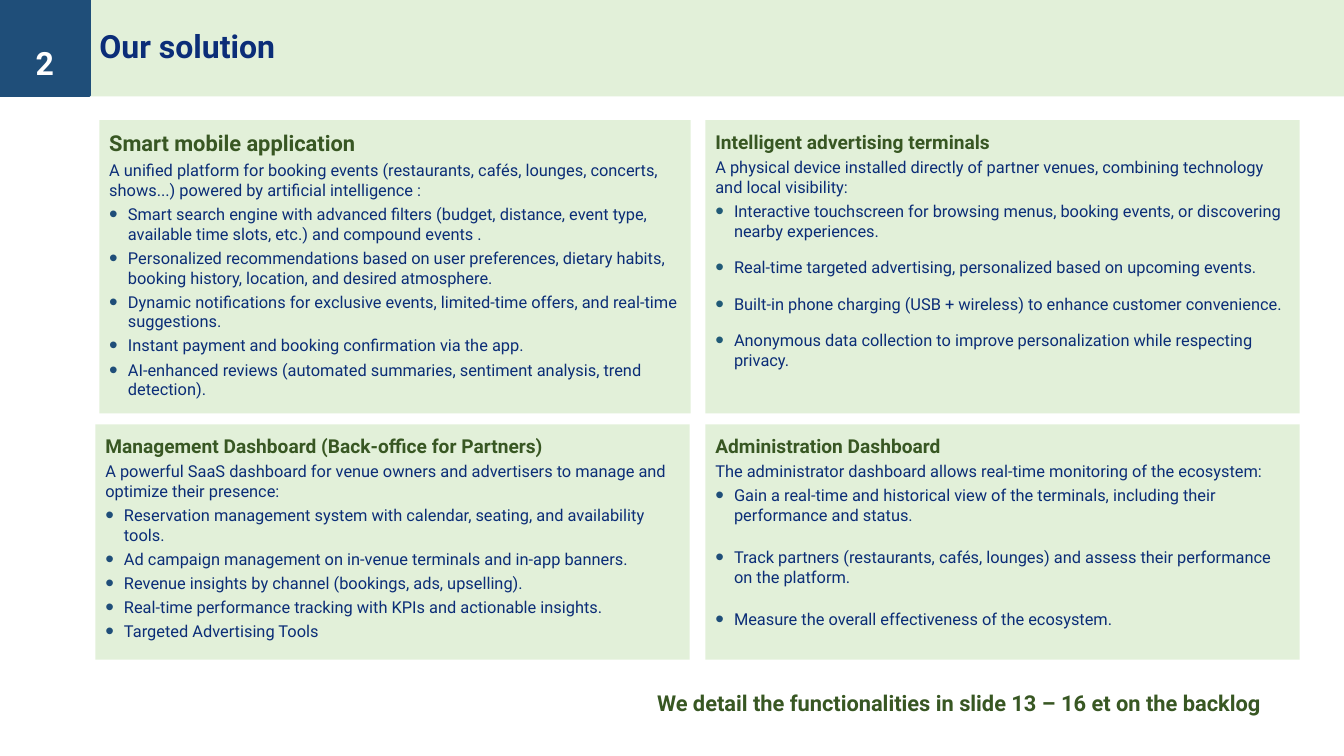
from lxml.etree import SubElement
from pptx import Presentation
from pptx.dml.color import RGBColor
from pptx.enum.shapes import MSO_SHAPE as Shape
from pptx.enum.text import MSO_ANCHOR as Anchor, MSO_AUTO_SIZE as Fit, PP_ALIGN as Align
from pptx.oxml.ns import qn
from pptx.util import Inches, Pt

COLORS = {"band": "E2F0D9", "square": "1F4E79", "teal": "215A77", "heading": "385723",
          "title": "0B2D78", "text": "0B2D77", "white": "FFFFFF"}

PANELS = [
    dict(box=(1.01, 1.22, 6.01, 2.98), heading="Smart mobile application", heading_size=16,
         intro="A unified platform for booking events (restaurants, cafés, lounges, concerts, "
               "shows...) powered by artificial intelligence :",
         points=["Smart search engine with advanced filters (budget, distance, event type, "
                 "available time slots, etc.) and compound events .",
                 "Personalized recommendations based on user preferences, dietary habits, "
                 "booking history, location, and desired atmosphere.",
                 "Dynamic notifications for exclusive events, limited-time offers, and "
                 "real-time suggestions.",
                 "Instant payment and booking confirmation via the app.",
                 "AI-enhanced reviews (automated summaries, sentiment analysis, trend detection)."]),
    dict(box=(7.17, 1.22, 6.04, 2.98), heading="Intelligent advertising terminals",
         intro="A physical device installed directly of partner venues, combining technology "
               "and local visibility:",
         points=["Interactive touchscreen for browsing menus, booking events, or discovering "
                 "nearby experiences.",
                 "Real-time targeted advertising, personalized based on upcoming events.",
                 "Built-in phone charging (USB + wireless) to enhance customer convenience.",
                 "Anonymous data collection to improve personalization while respecting privacy."],
         gap=12.3, bullet="teal"),
    dict(box=(0.97, 4.31, 6.04, 2.39), heading="Management Dashboard (Back-office for Partners)",
         intro="A powerful SaaS dashboard for venue owners and advertisers to manage and "
               "optimize their presence:",
         points=["Reservation management system with calendar, seating, and availability tools.",
                 "Ad campaign management on in-venue terminals and in-app banners.",
                 "Revenue insights by channel (bookings, ads, upselling).",
                 "Real-time performance tracking with KPIs and actionable insights.",
                 "Targeted Advertising Tools"]),
    dict(box=(7.17, 4.31, 6.04, 2.39), heading="Administration Dashboard",
         intro="The administrator dashboard allows real-time monitoring of the ecosystem:",
         points=["Gain a real-time and historical view of the terminals, including their "
                 "performance and status.",
                 "Track partners (restaurants, cafés, lounges) and assess their performance "
                 "on the platform.",
                 "Measure the overall effectiveness of the ecosystem."],
         gap=16.4),
]


def apply(target, values):
    """Set every attribute of a dict on the target."""
    for name, value in values.items():
        setattr(target, name, value)


class SolutionSlide:
    """Holds the style and the current slide."""

    font = "Roboto"
    spacing = 3.2
    indent = 0.19
    margins = {f"margin_{side}": Inches(0.1) for side in ("left", "top", "right", "bottom")}

    def __init__(self, deck):
        """Add a slide with a title and four text placeholders."""
        self.slide = deck.slides.add_slide(deck.slide_layouts[4])
        self.bodies = [p for p in self.slide.placeholders if p.placeholder_format.idx in range(1, 5)]

    def fill(self, shape, color):
        """Give a shape a solid colour."""
        shape.fill.solid()
        shape.fill.fore_color.rgb = RGBColor.from_string(COLORS[color])

    def place(self, shape, box, anchor):
        """Move a placeholder and give it the band colour and margins."""
        apply(shape, dict(zip(("left", "top", "width", "height"), map(Inches, box))))
        self.fill(shape, "band")
        apply(shape.text_frame, {**self.margins, "word_wrap": True, "auto_size": Fit.NONE,
                                 "vertical_anchor": anchor})

    def typeset(self, paragraph, text, size, color, bold=True, **layout):
        """Fill one paragraph with formatted text."""
        run = paragraph.add_run()
        run.text = text
        apply(run.font, {"name": self.font, "size": Pt(size), "bold": bold})
        run.font.color.rgb = RGBColor.from_string(COLORS[color])
        apply(paragraph, {"alignment": Align.LEFT, **layout})

    def mark(self, paragraph, color=None):
        """Set a round bullet, or none when no colour is given."""
        props = paragraph._p.get_or_add_pPr()
        indent = Inches(self.indent) if color else 0
        props.set("marL", str(indent))
        props.set("indent", str(-indent))
        if not color:
            SubElement(props, qn("a:buNone"))
            return
        SubElement(SubElement(props, qn("a:buClr")), qn("a:srgbClr"), val=COLORS[color])
        SubElement(props, qn("a:buSzPct"), val="150000")
        SubElement(props, qn("a:buFont"), typeface="Arial")
        SubElement(props, qn("a:buChar"), char="•")

    def title(self, text, box):
        """Fill the title band."""
        band = self.slide.shapes.title
        self.place(band, box, Anchor.MIDDLE)
        self.typeset(band.text_frame.paragraphs[0], text, 23.4, "title", line_spacing=0.9)

    def panel(self, body, box, heading, intro, points, heading_size=14, gap=3.2, bullet="square"):
        """Fill a body placeholder with a heading, an introduction and bullets."""
        self.place(body, box, Anchor.TOP)
        frame = body.text_frame
        before = Pt(self.spacing)
        opening = frame.paragraphs[0]
        self.typeset(opening, heading, heading_size, "heading", space_before=before)
        self.mark(opening)
        summary = frame.add_paragraph()
        self.typeset(summary, intro, 12, "text", False, space_before=before)
        self.mark(summary)
        for index, point in enumerate(points):
            item = frame.add_paragraph()
            self.typeset(item, point, 12, "text", False, space_before=Pt(gap) if index else before)
            self.mark(item, bullet)

    def square(self, box, color):
        """Draw a plain coloured rectangle."""
        corner = self.slide.shapes.add_shape(Shape.RECTANGLE, *map(Inches, box))
        corner.shadow.inherit = False
        self.fill(corner, color)
        corner.line.color.rgb = RGBColor.from_string(COLORS[color])
        corner.line.width = Pt(2)

    def label(self, text, box, size, color, wrap=True, **layout):
        """Add a free line of text."""
        frame = self.slide.shapes.add_textbox(*map(Inches, box)).text_frame
        apply(frame, {"word_wrap": wrap, "auto_size": Fit.SHAPE_TO_FIT_TEXT})
        self.typeset(frame.paragraphs[0], text, size, color, **layout)


def main():
    """Build and save the deck."""
    deck = Presentation()
    apply(deck, {"slide_width": Inches(13.66), "slide_height": Inches(7.68)})
    solution = SolutionSlide(deck)
    solution.title("Our solution", (0.91, 0, 12.75, 0.98))
    for body, panel in zip(solution.bodies, PANELS):
        solution.panel(body, **panel)
    solution.square((0, 0, 0.91, 0.97), "square")
    solution.label("2", (0, 0, 0.91, 0.77), 23.4, "white", alignment=Align.CENTER, line_spacing=2.0)
    solution.label("We detail the functionalities in slide 13 – 16 et on the backlog",
                   (6.58, 6.96, 6.74, 0.37), 16, "heading", wrap=False)
    deck.save("out.pptx")


if __name__ == "__main__":
    main()
